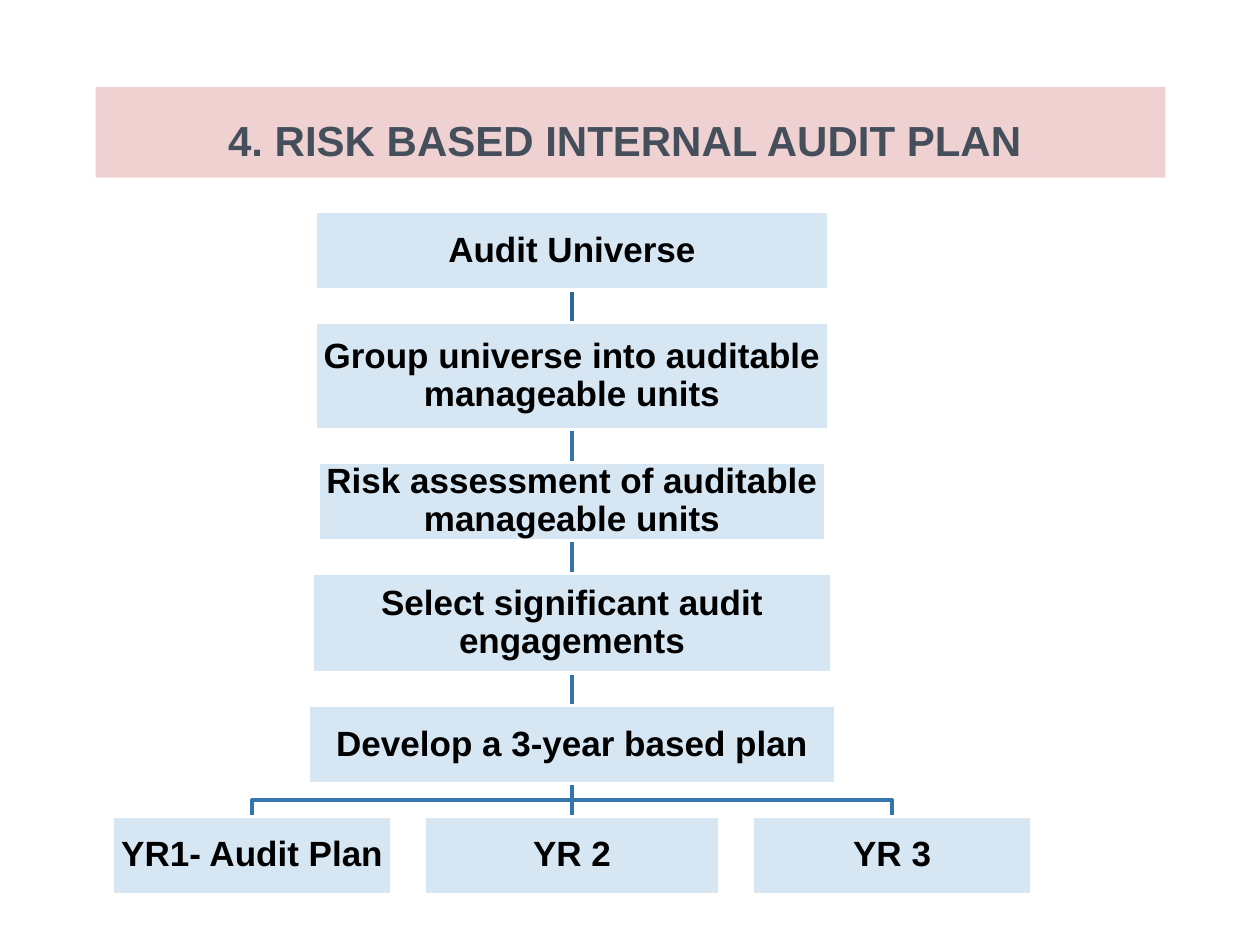
import pptx
import pptx.util
import pptx.dml.color
import pptx.enum.shapes
import pptx.enum.text
import pptx.oxml.ns
import lxml.etree

Inches, Pt = pptx.util.Inches, pptx.util.Pt
RGBColor = pptx.dml.color.RGBColor
ANCHOR = pptx.enum.text.MSO_ANCHOR

PINK = RGBColor(0xEF, 0xD1, 0xD1)
SLATE = RGBColor(0x45, 0x4F, 0x5B)
PALE_BLUE = RGBColor(0xD6, 0xE6, 0xF2)
BLUE = RGBColor(0x35, 0x75, 0xA9)
DARK_BLUE = RGBColor(0x2E, 0x67, 0x95)
BLACK = RGBColor(0, 0, 0)
WHITE = RGBColor(0xFF, 0xFF, 0xFF)

CENTRE = 4.54
GAP = 0.26


def set_text(sp, text, size=20, color=BLACK, anchor=ANCHOR.MIDDLE, inset=0.01, spacing=0.9):
    tf = sp.text_frame
    tf.word_wrap = True
    tf.auto_size = pptx.enum.text.MSO_AUTO_SIZE.NONE
    tf.vertical_anchor = anchor
    tf.margin_left = tf.margin_right = tf.margin_top = tf.margin_bottom = Inches(inset)
    p = tf.paragraphs[0]
    p.alignment = pptx.enum.text.PP_ALIGN.CENTER
    p.line_spacing = spacing
    r = p.add_run()
    r.text = text
    r.font.name = "Arial"
    r.font.size = Pt(size)
    r.font.bold = True
    r.font.color.rgb = color


prs = pptx.Presentation()
prs.slide_width, prs.slide_height = Inches(10), Inches(7.5)
s = prs.slides.add_slide(prs.slide_layouts[5])

title = s.shapes.title
title.left, title.top = Inches(0.76), Inches(0.69)
title.width, title.height = Inches(8.49), Inches(0.72)
title.fill.solid()
title.fill.fore_color.rgb = PINK
set_text(title, "4. RISK BASED INTERNAL AUDIT PLAN ", size=24, color=SLATE,
         anchor=ANCHOR.BOTTOM, inset=0.1, spacing=1.0)

# Each row: height, then its boxes as (text, width), centred on one axis
rows = [
    (0.62, [("Audit Universe", 4.08)]),
    (0.85, [("Group universe into auditable manageable units", 4.07)]),
    (0.62, [("Risk assessment of auditable manageable units", 4.03)]),
    (0.79, [("Select significant audit engagements", 4.12)]),
    (0.62, [("Develop a 3-year based plan", 4.18)]),
    (0.62, [("YR1- Audit Plan", 2.22), ("YR 2", 2.34), ("YR 3", 2.22)]),
]
box_rows = []
top = 1.68
for height, items in rows:
    boxes = []
    left = CENTRE - (sum(w for _, w in items) + GAP * (len(items) - 1)) / 2
    for text, width in items:
        sp = s.shapes.add_shape(pptx.enum.shapes.MSO_SHAPE.RECTANGLE, Inches(left),
                                Inches(top), Inches(width), Inches(height))
        sp.shadow.inherit = False
        sp.fill.solid()
        sp.fill.fore_color.rgb = PALE_BLUE
        sp.line.color.rgb = WHITE
        sp.line.width = Pt(2)
        set_text(sp, text)
        boxes.append(sp)
        left += width + GAP
    box_rows.append(boxes)
    top += height + GAP

# Lines go behind the boxes, whose white outlines trim their ends
first_box = box_rows[0][0]
for i, (parents, children) in enumerate(zip(box_rows, box_rows[1:])):
    parent, middle = parents[0], children[len(children) // 2]
    line = s.shapes.add_connector(pptx.enum.shapes.MSO_CONNECTOR.STRAIGHT, 0, 0, 0, 0)
    line.begin_connect(parent, 2)
    line.end_connect(middle, 0)
    line.line.color.rgb = BLUE if i else DARK_BLUE
    line.line.width = Pt(2)
    lxml.etree.SubElement(line.element.spPr, pptx.oxml.ns.qn("a:effectLst"))
    first_box.element.addprevious(line.element)

# Elbows from the plan to the outer years
plan, years = box_rows[-2][0], box_rows[-1]
start_x, start_y = Inches(CENTRE), plan.top + plan.height
for year in (years[0], years[-1]):
    end_x = year.left + year.width // 2
    bend_y = (start_y + year.top) // 2
    fb = s.shapes.build_freeform(start_x, start_y)
    fb.add_line_segments([(start_x, bend_y), (end_x, bend_y), (end_x, year.top)], close=False)
    elbow = fb.convert_to_shape()
    elbow.shadow.inherit = False
    elbow.fill.background()
    elbow.line.color.rgb = BLUE
    elbow.line.width = Pt(2)
    first_box.element.addprevious(elbow.element)

prs.save("out.pptx")
